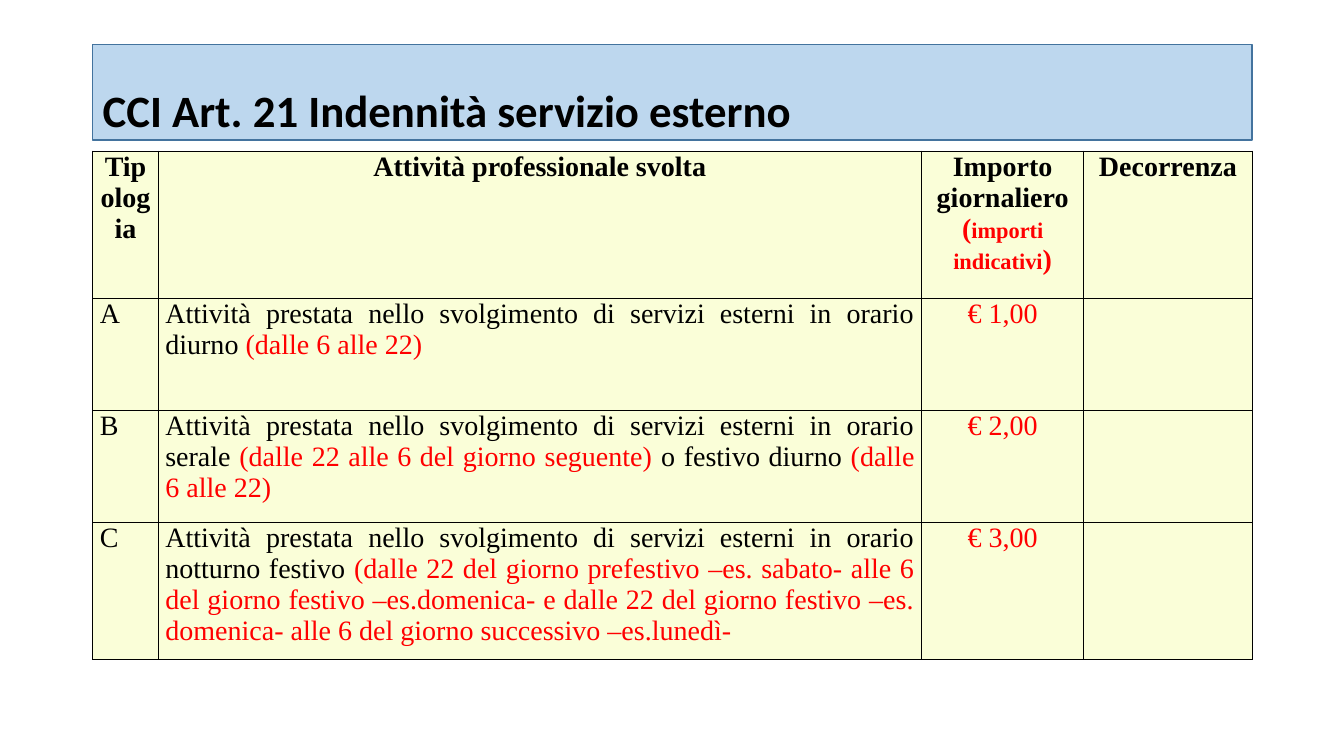
from lxml.etree import SubElement
from pptx import Presentation
from pptx.dml.color import RGBColor
from pptx.enum.shapes import MSO_SHAPE
from pptx.enum.text import MSO_ANCHOR, PP_ALIGN
from pptx.oxml.ns import qn
from pptx.util import Inches, Pt

COLORS = {"black": "000000", "red": "FF0000", "band": "BDD7EE",
          "band_line": "43739E", "cell": "FAFED8"}
TITLE = "CCI Art. 21 Indennità servizio esterno"
ACTIVITY = "Attività prestata nello svolgimento di servizi esterni in orario "
HEADER = [
    [("Tipologia", "black", 20)],
    [("Attività professionale svolta", "black", 20)],
    [("Importo giornaliero ", "black", 20), ("(", "red", 20),
     ("importi indicativi", "red", 16), (")", "red", 20)],
    [("Decorrenza", "black", 20)],
]
SERVICES = [
    ("A", [("diurno ", "black"), ("(dalle 6 alle 22)", "red")], "€ 1,00"),
    ("B", [("serale ", "black"), ("(dalle 22 alle 6 del giorno seguente) ", "red"),
           ("o festivo diurno ", "black"), ("(dalle 6 alle 22)", "red")], "€ 2,00"),
    ("C", [("notturno festivo ", "black"),
           ("(dalle 22 del giorno prefestivo –es. sabato- alle 6 del giorno festivo "
            "–es.domenica- e dalle 22 del giorno festivo –es. domenica- alle 6 del "
            "giorno successivo –es.lunedì-", "red")], "€ 3,00"),
]
COL_WIDTHS = [0.65, 7.57, 1.61, 1.67]
ROW_HEIGHTS = [1.46, 1.11, 1.11, 1.36]
LEFT, WIDTH = 0.92, 11.5


def rgb(name):
    return RGBColor.from_string(COLORS[name])


def add_run(p, text, color, size, font, bold):
    r = p.add_run()
    r.text = text
    r.font.name, r.font.size, r.font.bold = font, Pt(size), bold
    r.font.color.rgb = rgb(color)


def add_title(s):
    band = s.shapes.add_shape(MSO_SHAPE.RECTANGLE, Inches(LEFT), Inches(0.44),
                              Inches(WIDTH), Inches(0.95))
    band.shadow.inherit = False
    band.fill.solid()
    band.fill.fore_color.rgb = rgb("band")
    band.line.color.rgb = rgb("band_line")
    band.line.width = Pt(1)
    tf = s.shapes.add_textbox(Inches(LEFT), Inches(0.4), Inches(WIDTH),
                              Inches(1.45)).text_frame
    tf.word_wrap = True
    tf.vertical_anchor = MSO_ANCHOR.MIDDLE
    p = tf.paragraphs[0]
    p.line_spacing = 0.9
    add_run(p, TITLE, "black", 32, "Calibri", True)


def style_cell(cell):
    cell.margin_left = cell.margin_right = Inches(0.07)
    cell.margin_top = cell.margin_bottom = 0
    pr = cell._tc.get_or_add_tcPr()
    for side in ("a:lnL", "a:lnR", "a:lnT", "a:lnB"):
        ln = SubElement(pr, qn(side), w=str(Pt(1)))
        fill = SubElement(ln, qn("a:solidFill"))
        SubElement(fill, qn("a:srgbClr"), val=COLORS["black"])
    cell.fill.solid()
    cell.fill.fore_color.rgb = rgb("cell")


def add_services(s):
    rows = [HEADER]
    for kind, parts, amount in SERVICES:
        activity = [(ACTIVITY + parts[0][0], "black")] + parts[1:]
        rows.append([[(kind, "black", 20)],
                     [(text, color, 20) for text, color in activity],
                     [(amount, "red", 20)], []])
    table = s.shapes.add_table(len(rows), len(COL_WIDTHS), Inches(LEFT), Inches(1.5),
                               Inches(WIDTH), Inches(sum(ROW_HEIGHTS))).table
    for col, width in zip(table.columns, COL_WIDTHS):
        col.width = Inches(width)
    for row, height in zip(table.rows, ROW_HEIGHTS):
        row.height = Inches(height)
    for i, row in enumerate(rows):
        for j, runs in enumerate(row):
            cell = table.cell(i, j)
            style_cell(cell)
            if not runs:
                continue
            p = cell.text_frame.paragraphs[0]
            p.alignment = PP_ALIGN.JUSTIFY if i and j < 2 else PP_ALIGN.CENTER
            p.space_before = p.space_after = Pt(6)
            for text, color, size in runs:
                add_run(p, text, color, size, "Times New Roman", i == 0)


def main():
    """Build the slide on the external service allowance."""
    prs = Presentation()
    prs.slide_width, prs.slide_height = Inches(13.33), Inches(7.5)
    s = prs.slides.add_slide(prs.slide_layouts[6])
    add_title(s)
    add_services(s)
    prs.save("out.pptx")


if __name__ == "__main__":
    main()
